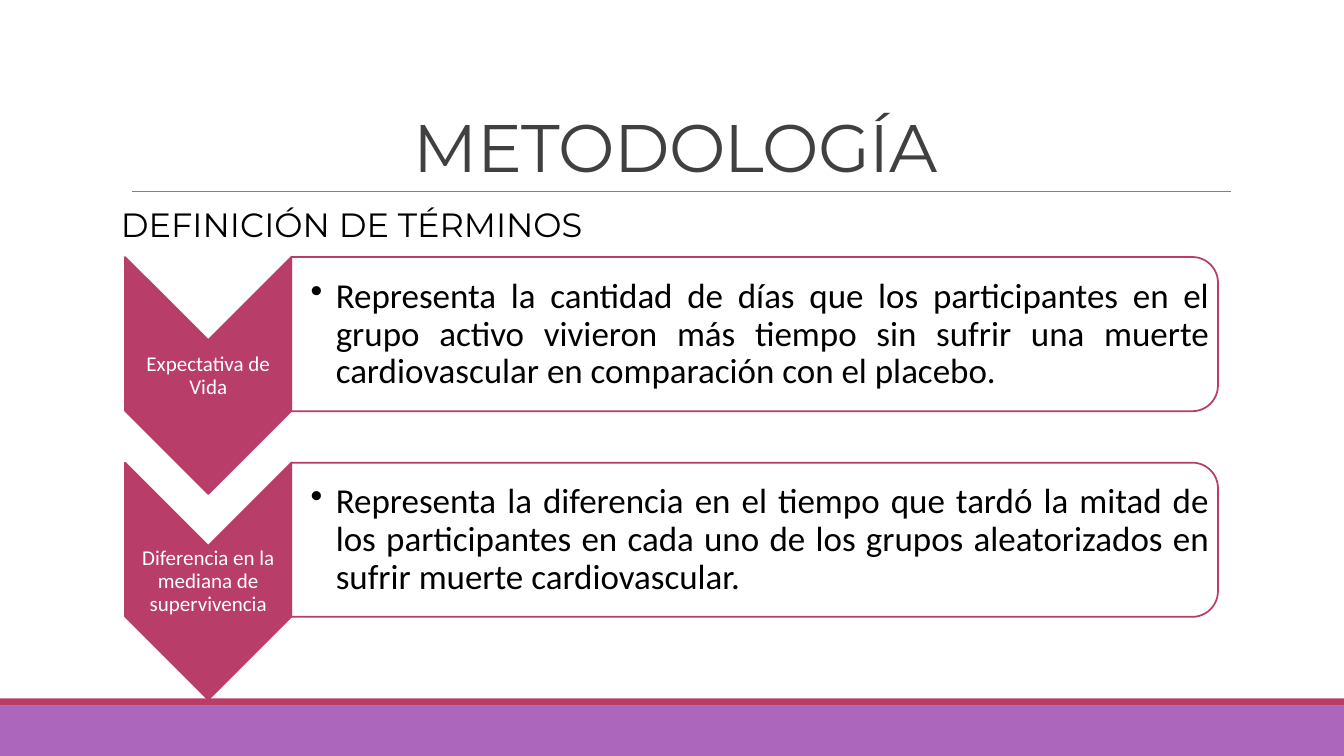
from lxml.etree import SubElement
from pptx import Presentation
from pptx.dml.color import RGBColor
from pptx.enum.shapes import MSO_CONNECTOR, MSO_SHAPE
from pptx.enum.text import MSO_ANCHOR, MSO_AUTO_SIZE, PP_ALIGN
from pptx.oxml.ns import qn
from pptx.util import Inches, Pt

COLORS = {
    "purple": "AC66BB",
    "magenta": "B83D68",
    "rule": "808080",
    "title": "404040",
    "white": "FFFFFF",
    "black": "000000",
}
WIDTH, HEIGHT = 13.33, 7.5
LEFT, CONTENT_WIDTH = 1.2, 11
CHEVRON_LEFT, CHEVRON_WIDTH, CHEVRON_HEIGHT = 1.24, 1.65, 2.35
PANEL_LEFT, PANEL_WIDTH, PANEL_HEIGHT = CHEVRON_LEFT + CHEVRON_WIDTH, 9.19, 1.53
FIRST_ROW, ROW_STEP = 2.55, 2.04

TERMS = [
    ("Expectativa de Vida",
     "Representa la cantidad de días que los participantes en el grupo activo vivieron "
     "más tiempo sin sufrir una muerte cardiovascular en comparación con el placebo."),
    ("Diferencia en la mediana de supervivencia",
     "Representa la diferencia en el tiempo que tardó la mitad de los participantes en "
     "cada uno de los grupos aleatorizados en sufrir muerte cardiovascular."),
]

presentation = Presentation()
presentation.slide_width = Inches(WIDTH)
presentation.slide_height = Inches(HEIGHT)
slide = presentation.slides.add_slide(presentation.slide_layouts[5])


def add_block(kind, left, top, width, height, fill, line=None, turned=False):
    if turned:
        left, top = left + (width - height) / 2, top + (height - width) / 2
        width, height = height, width
    shape = slide.shapes.add_shape(kind, Inches(left), Inches(top), Inches(width), Inches(height))
    shape.shadow.inherit = False
    shape.rotation = 90 if turned else 0
    shape.fill.solid()
    shape.fill.fore_color.rgb = RGBColor.from_string(COLORS[fill])
    if line:
        shape.line.color.rgb = RGBColor.from_string(COLORS[line])
        shape.line.width = Pt(1.25)
    else:
        shape.line.fill.background()
    return shape


def write_text(shape, text, size, font, color, align, anchor, insets, spacing=0.9):
    frame = shape.text_frame
    frame.word_wrap = True
    frame.auto_size = MSO_AUTO_SIZE.NONE
    frame.vertical_anchor = anchor
    frame.margin_left, frame.margin_top, frame.margin_right, frame.margin_bottom = map(Inches, insets)
    paragraph = frame.paragraphs[0]
    paragraph.alignment = align
    paragraph.line_spacing = spacing
    run = paragraph.add_run()
    run.text = text
    run.font.size = Pt(size)
    run.font.name = font
    run.font.color.rgb = RGBColor.from_string(COLORS[color])
    return paragraph


add_block(MSO_SHAPE.RECTANGLE, 0, 7, WIDTH, 0.5, "purple")
add_block(MSO_SHAPE.RECTANGLE, 0, 6.93, WIDTH, 0.07, "magenta")

rule = slide.shapes.add_connector(
    MSO_CONNECTOR.STRAIGHT, Inches(1.31), Inches(1.9), Inches(12.21), Inches(1.9))
rule.line.color.rgb = RGBColor.from_string(COLORS["rule"])
rule.line.width = Pt(0.5)
SubElement(rule._element.spPr, qn("a:effectLst"))

title = slide.shapes.title
title.left, title.top = Inches(LEFT), Inches(0.31)
title.width, title.height = Inches(CONTENT_WIDTH), Inches(1.59)
paragraph = write_text(title, "METODOLOGÍA", 48, "Montserrat", "title", PP_ALIGN.CENTER,
                       MSO_ANCHOR.BOTTOM, (0.1, 0.05, 0.1, 0.05), 0.85)
paragraph.runs[0].font._element.set("spc", "-50")

heading = slide.shapes.add_textbox(Inches(LEFT), Inches(2.02), Inches(CONTENT_WIDTH), Inches(0.5))
paragraph = write_text(heading, "DEFINICIÓN DE TÉRMINOS", 24, "Montserrat", "black",
                       PP_ALIGN.LEFT, MSO_ANCHOR.TOP, (0, 0.05, 0, 0.05))
paragraph.space_before, paragraph.space_after = Pt(12), Pt(2)

for row, (term, definition) in enumerate(TERMS):
    top = FIRST_ROW + row * ROW_STEP
    add_block(MSO_SHAPE.CHEVRON, CHEVRON_LEFT, top, CHEVRON_WIDTH, CHEVRON_HEIGHT,
              "magenta", "magenta", turned=True)
    label = slide.shapes.add_textbox(
        Inches(CHEVRON_LEFT), Inches(top + CHEVRON_WIDTH / 2), Inches(CHEVRON_WIDTH), Inches(0.71))
    write_text(label, term, 15, "Calibri", "white", PP_ALIGN.CENTER,
               MSO_ANCHOR.MIDDLE, (0.01, 0.01, 0.01, 0.01))

    panel = add_block(MSO_SHAPE.ROUND_2_SAME_RECTANGLE, PANEL_LEFT, top, PANEL_WIDTH,
                      PANEL_HEIGHT, "white", "magenta", turned=True)
    panel_color = panel._element.spPr.find(qn("a:solidFill")).find(qn("a:srgbClr"))
    SubElement(panel_color, qn("a:alpha"), val="90000")
    body = slide.shapes.add_textbox(
        Inches(PANEL_LEFT), Inches(top + 0.08), Inches(9.12), Inches(1.38))
    paragraph = write_text(body, definition, 25, "Calibri", "black", PP_ALIGN.JUSTIFY,
                           MSO_ANCHOR.MIDDLE, (0.19, 0.02, 0.02, 0.02))
    paragraph.level = 1
    properties = paragraph._element.get_or_add_pPr()
    properties.set("marL", str(Inches(0.25)))
    properties.set("indent", str(Inches(-0.25)))
    SubElement(properties, qn("a:buChar"), char="•")

presentation.save("out.pptx")
